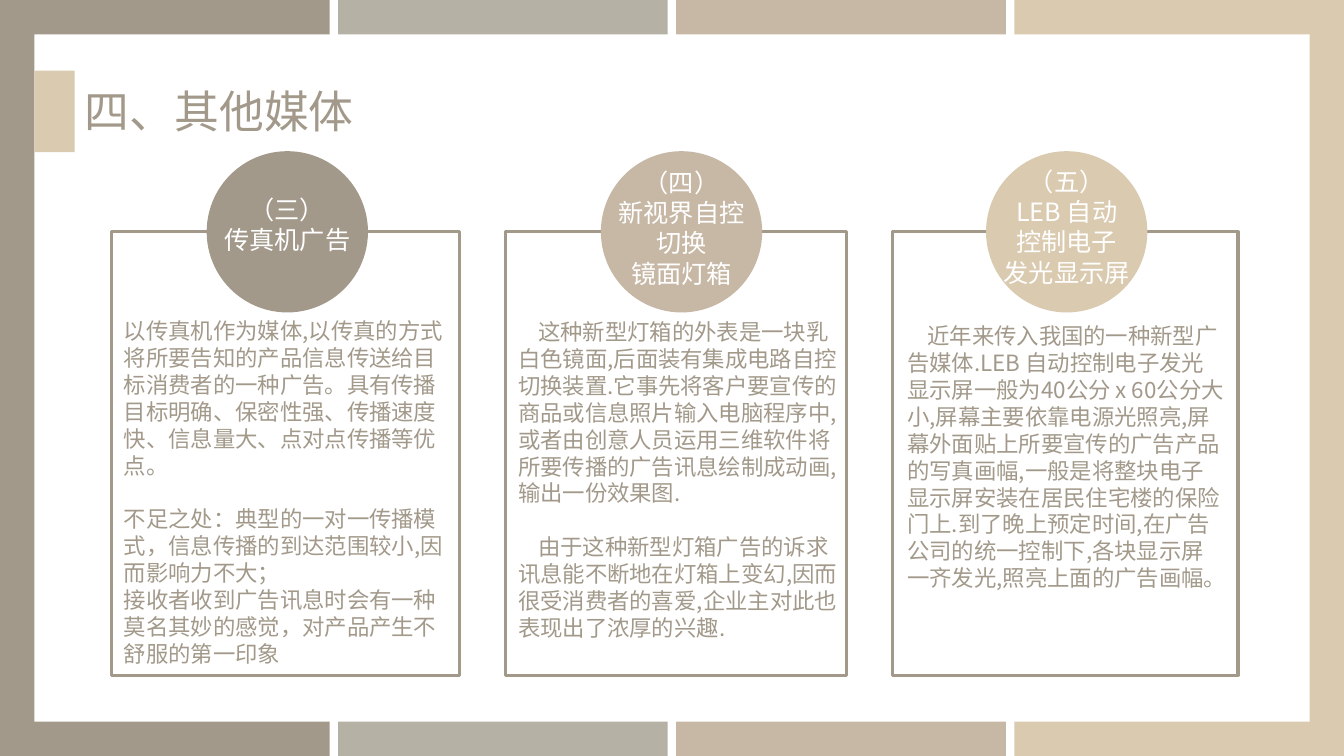
from dataclasses import dataclass

from pptx import Presentation
from pptx.dml.color import RGBColor
from pptx.enum.shapes import MSO_SHAPE
from pptx.enum.text import MSO_ANCHOR, MSO_AUTO_SIZE, PP_ALIGN
from pptx.oxml.ns import qn
from pptx.util import Inches, Pt

RECTANGLE, OVAL = MSO_SHAPE.RECTANGLE, MSO_SHAPE.OVAL
TOP, NO_FIT = MSO_ANCHOR.TOP, MSO_AUTO_SIZE.NONE
LEFT, CENTER = PP_ALIGN.LEFT, PP_ALIGN.CENTER

FONT = "Noto Sans CJK SC"
TAUPE, SAGE, ROSE, SAND, WHITE = "A2998A", "B6B1A5", "C7B8A6", "DACAB0", "FFFFFF"
SLIDE_WIDTH, SLIDE_HEIGHT = 13.33, 7.5
STRIPE_WIDTH = 3.27
FRAME_TOP, FRAME_HEIGHT = 2.3, 4.4
CIRCLE_TOP, CIRCLE_SIZE = 1.5, 1.6
LABEL_WIDTH = 1.46
FIRST_LINE_INDENT = 0.2


@dataclass(frozen=True)
class Box:
    left: float
    top: float
    width: float
    height: float

    def lengths(self):
        return [Inches(v) for v in (self.left, self.top, self.width, self.height)]


@dataclass(frozen=True)
class Line:
    text: str
    indent: float = 0
    lines_before: int = 0


@dataclass(frozen=True)
class Medium:
    frame_left: float
    frame_width: float
    circle_left: float
    color: str
    label_top: float
    label: tuple[str, ...]
    body_box: Box
    body: tuple[Line, ...]


MEDIA = (
    Medium(1.11, 3.45, 2.05, TAUPE, 1.88, ("（三）", "传真机广告"), Box(1.13, 3.1, 3.4, 3.6), (
        Line("以传真机作为媒体,以传真的方式将所要告知的产品信息传送给目标消费者的一种广告。"
             "具有传播目标明确、保密性强、传播速度快、信息量大、点对点传播等优点。"),
        Line("不足之处：典型的一对一传播模式，信息传播的到达范围较小,因而影响力不大；",
             lines_before=1),
        Line("接收者收到广告讯息时会有一种莫名其妙的感觉，对产品产生不舒服的第一印象"),
    )),
    Medium(5.01, 3.39, 5.96, ROSE, 1.61, ("（四）", "新视界自控", "切换", "镜面灯箱"),
           Box(5.04, 3.11, 3.37, 3.33), (
        Line("这种新型灯箱的外表是一块乳白色镜面,后面装有集成电路自控切换装置."
             "它事先将客户要宣传的商品或信息照片输入电脑程序中,或者由创意人员运用"
             "三维软件将所要传播的广告讯息绘制成动画,输出一份效果图.", FIRST_LINE_INDENT),
        Line("由于这种新型灯箱广告的诉求讯息能不断地在灯箱上变幻,因而很受消费者的喜爱,"
             "企业主对此也表现出了浓厚的兴趣.", FIRST_LINE_INDENT, 1),
    )),
    Medium(8.85, 3.43, 9.78, SAND, 1.6, ("（五）", "LEB 自动", "控制电子", "发光显示屏"),
           Box(8.9, 3.15, 3.36, 3.06), (
        Line("近年来传入我国的一种新型广告媒体.LEB 自动控制电子发光显示屏一般为"
             "40公分 x 60公分大小,屏幕主要依靠电源光照亮,屏幕外面贴上所要宣传的"
             "广告产品的写真画幅,一般是将整块电子显示屏安装在居民住宅楼的保险门上."
             "到了晚上预定时间,在广告公司的统一控制下,各块显示屏一齐发光,"
             "照亮上面的广告画幅。", FIRST_LINE_INDENT),
    )),
)


def rgb(color: str) -> RGBColor:
    return RGBColor.from_string(color)


def add_filled(slide, kind, box: Box, color: str) -> None:
    shape = slide.shapes.add_shape(kind, *box.lengths())
    shape.shadow.inherit = False
    shape.fill.solid()
    shape.fill.fore_color.rgb = rgb(color)
    shape.line.fill.background()


def add_frame(slide, box: Box) -> None:
    frame = slide.shapes.add_shape(RECTANGLE, *box.lengths())
    frame.shadow.inherit = False
    frame.fill.background()
    frame.line.color.rgb = rgb(TAUPE)
    frame.line.width = Pt(2.25)


def write(holder, lines: tuple[Line, ...], size: float, color: str,
          align=LEFT, wrap: bool = True) -> None:
    text_frame = holder.text_frame
    frame_format = {"auto_size": NO_FIT, "word_wrap": wrap, "vertical_anchor": TOP}
    for name, value in frame_format.items():
        setattr(text_frame, name, value)
    spacing = size * 1.2
    for index, line in enumerate(lines):
        paragraph = text_frame.paragraphs[0] if index == 0 else text_frame.add_paragraph()
        paragraph_format = {
            "alignment": align,
            "line_spacing": Pt(spacing),
            "space_before": Pt(spacing * line.lines_before),
        }
        for name, value in paragraph_format.items():
            setattr(paragraph, name, value)
        if line.indent:
            paragraph._p.get_or_add_pPr().set("indent", str(Inches(line.indent)))
        run = paragraph.add_run()
        run.text = line.text
        for name, value in {"name": FONT, "size": Pt(size), "bold": False}.items():
            setattr(run.font, name, value)
        run.font.color.rgb = rgb(color)
        latin = run._r.get_or_add_rPr().find(qn("a:latin"))
        east_asian = latin.makeelement(qn("a:ea"), {"typeface": FONT})
        latin.addnext(east_asian)


def add_background(slide) -> None:
    colors = (TAUPE, SAGE, ROSE, SAND)
    pitch = (SLIDE_WIDTH - STRIPE_WIDTH) / (len(colors) - 1)
    for index, color in enumerate(colors):
        add_filled(slide, RECTANGLE, Box(index * pitch, 0, STRIPE_WIDTH, SLIDE_HEIGHT), color)
    add_filled(slide, RECTANGLE, Box(0.34, 0.34, 12.65, 6.82), WHITE)


def add_heading(slide) -> None:
    add_filled(slide, RECTANGLE, Box(0.34, 0.7, 0.4, 0.81), SAND)
    title = slide.shapes.title
    slide.shapes._spTree.append(title._element)
    position = Box(0.74, 0.78, 4.59, 0.64).lengths()
    for name, value in zip(("left", "top", "width", "height"), position):
        setattr(title, name, value)
    write(title, (Line("四、其他媒体"),), 32, TAUPE)


def add_medium(slide, medium: Medium) -> None:
    add_frame(slide, Box(medium.frame_left, FRAME_TOP, medium.frame_width, FRAME_HEIGHT))
    add_filled(slide, OVAL, Box(medium.circle_left, CIRCLE_TOP, CIRCLE_SIZE, CIRCLE_SIZE),
               medium.color)
    label_box = Box(medium.circle_left + (CIRCLE_SIZE - LABEL_WIDTH) / 2, medium.label_top,
                    LABEL_WIDTH, 0.1 + 0.3 * len(medium.label))
    label = slide.shapes.add_textbox(*label_box.lengths())
    write(label, tuple(Line(text) for text in medium.label), 18, WHITE, CENTER, False)
    body = slide.shapes.add_textbox(*medium.body_box.lengths())
    write(body, medium.body, 16, TAUPE)


def main() -> None:
    presentation = Presentation()
    presentation.slide_width = Inches(SLIDE_WIDTH)
    presentation.slide_height = Inches(SLIDE_HEIGHT)
    slide = presentation.slides.add_slide(presentation.slide_layouts[5])
    add_background(slide)
    add_heading(slide)
    for medium in MEDIA:
        add_medium(slide, medium)
    presentation.save("out.pptx")


if __name__ == "__main__":
    main()
